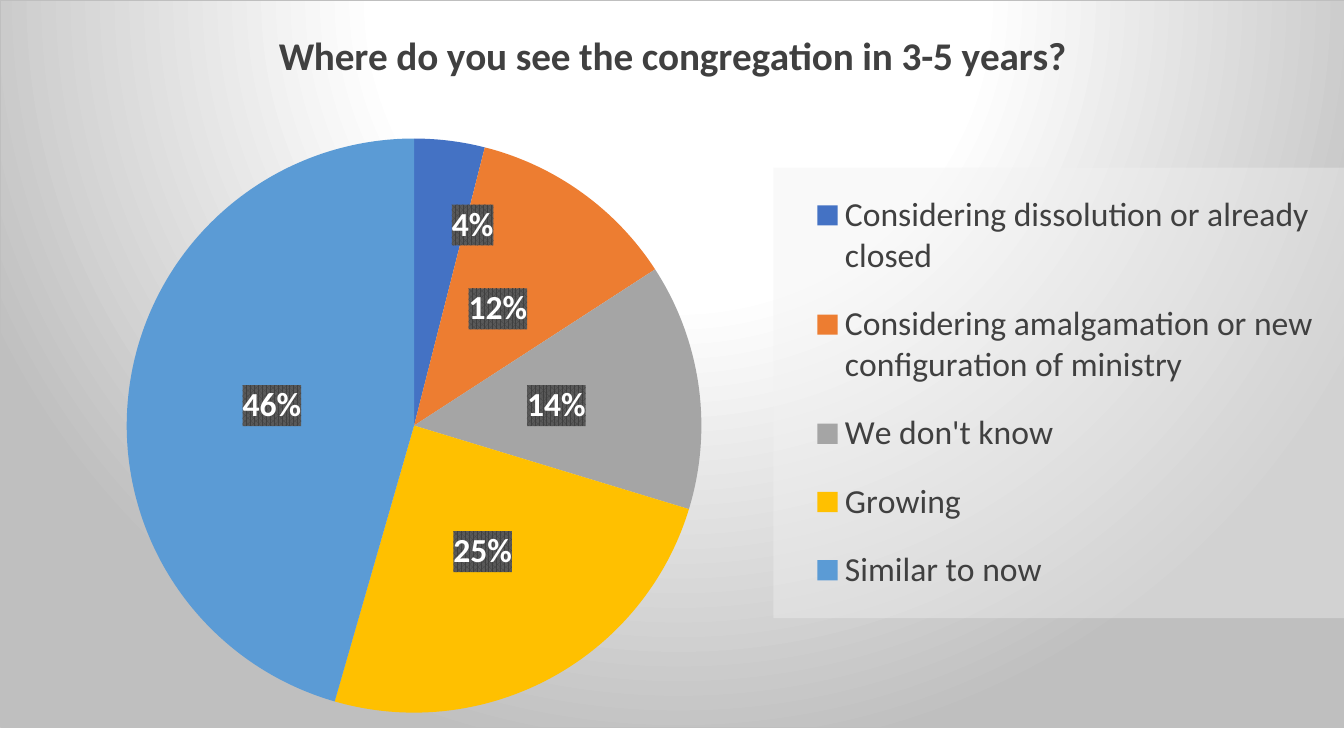
from dataclasses import dataclass

from lxml.etree import _Element as Element
from pptx import Presentation
from pptx.chart.data import CategoryChartData
from pptx.dml.color import RGBColor
from pptx.enum.chart import XL_CHART_TYPE as ChartType
from pptx.enum.chart import XL_LABEL_POSITION as LabelPosition
from pptx.enum.chart import XL_LEGEND_POSITION as LegendPosition
from pptx.oxml import parse_xml
from pptx.oxml.ns import nsdecls, qn
from pptx.text.text import Font
from pptx.util import Inches, Pt

COLORS = {
    "text": "404040", "label": "FFFFFF", "label_back": "595959",
    "panel": "F2F2F2", "edge": "BFBFBF", "light": "FFFFFF",
    "blue": "4472C4", "orange": "ED7D31", "gray": "A5A5A5",
    "gold": "FFC000", "sky": "5B9BD5",
}
QUESTION = "Where do you see the congregation in 3-5 years?"
NS = nsdecls("c", "a")


@dataclass(frozen=True)
class Outlook:
    answer: str
    share: int
    color: str


OUTLOOKS = [
    Outlook("Considering dissolution or already closed", 4, "blue"),
    Outlook("Considering amalgamation or new configuration of ministry", 12, "orange"),
    Outlook("We don't know", 14, "gray"),
    Outlook("Growing", 25, "gold"),
    Outlook("Similar to now", 46, "sky"),
]


def style_font(font: Font, size: int, color: str, bold: bool = False) -> None:
    font.name = "Calibri"
    font.size = Pt(size)
    font.bold = bold
    font.color.rgb = RGBColor.from_string(COLORS[color])


def solid(color: str, alpha: int = 100) -> str:
    return (f'<a:srgbClr val="{COLORS[color]}">'
            f'<a:alpha val="{alpha * 1000}"/></a:srgbClr>')


def shape_style(content: str) -> Element:
    return parse_xml(f"<c:spPr {NS}>{content}</c:spPr>")


def place(part: Element, index: int, **settings: str | float) -> None:
    for layout in part.findall(qn("c:layout")):
        part.remove(layout)
    values = "".join(f'<c:{key} val="{value}"/>' for key, value in settings.items())
    part.insert(index, parse_xml(
        f"<c:layout {NS}><c:manualLayout>{values}</c:manualLayout></c:layout>"))


prs = Presentation()
prs.slide_width, prs.slide_height = Inches(13.33), Inches(7.5)
slide = prs.slides.add_slide(prs.slide_layouts[6])

survey = CategoryChartData()
survey.categories = [outlook.answer for outlook in OUTLOOKS]
survey.add_series("Series 1", [outlook.share for outlook in OUTLOOKS])
chart = slide.shapes.add_chart(
    ChartType.PIE, 0, 0, Inches(13.46), Inches(7.22), survey).chart
style_font(chart.font, 24, "text")

chart.has_title = True
chart.chart_title.text_frame.text = QUESTION
style_font(chart.chart_title.text_frame.paragraphs[0].runs[0].font, 28, "text", True)

chart.has_legend = True
chart.legend.position = LegendPosition.RIGHT
chart.legend.include_in_layout = False
style_font(chart.legend.font, 24, "text")

pie = chart.plots[0]
pie.vary_by_categories = True
answers = pie.series[0]
for position, outlook in enumerate(OUTLOOKS):
    fill = answers.points[position].format.fill
    fill.solid()
    fill.fore_color.rgb = RGBColor.from_string(COLORS[outlook.color])

percents = answers.data_labels
percents.show_percentage = True
percents.show_value = False
percents.position = LabelPosition.CENTER
style_font(percents.font, 24, "label", True)

smallest = answers.points[0].data_label
style_font(smallest.font, 24, "label", True)
smallest.position = LabelPosition.CENTER

root = chart.element
label_style = (f'<a:pattFill prst="pct75"><a:fgClr>{solid("text")}</a:fgClr>'
               f'<a:bgClr>{solid("label_back")}</a:bgClr></a:pattFill>'
               "<a:ln><a:noFill/></a:ln>")
for text_style in root.findall(f".//{qn('c:dLbls')}//{qn('c:txPr')}"):
    labels = text_style.getparent()
    for old_style in labels.findall(qn("c:spPr")):
        labels.remove(old_style)
    text_style.addprevious(shape_style(label_style))
    labels.find(qn("c:showVal")).set("val", "0")
    labels.find(qn("c:showPercent")).set("val", "1")

place(root.find(f".//{qn('c:dLbl')}"), 1, x=0.03, y=-0.08)
place(root.find(f".//{qn('c:title')}"), 1, xMode="edge", yMode="edge", x=0.2, y=0.03)
place(root.find(f".//{qn('c:plotArea')}"), 0, layoutTarget="inner",
      xMode="edge", yMode="edge", x=0.09, y=0.19, w=0.43, h=0.79)
legend = root.find(f".//{qn('c:legend')}")
place(legend, 1, xMode="edge", yMode="edge", x=0.57, y=0.23, w=0.43, h=0.62)
legend.find(qn("c:txPr")).addprevious(shape_style(
    f'<a:solidFill>{solid("panel", 39)}</a:solidFill><a:ln><a:noFill/></a:ln>'))

stops = "".join(f'<a:gs pos="{percent * 1000}">{solid(color)}</a:gs>'
                for percent, color in [(0, "light"), (39, "light"), (100, "edge")])
root.find(qn("c:chart")).addnext(shape_style(
    f'<a:gradFill><a:gsLst>{stops}</a:gsLst><a:path path="circle">'
    '<a:fillToRect l="50000" t="-80000" r="50000" b="180000"/></a:path></a:gradFill>'
    f'<a:ln w="{Pt(0.75)}"><a:solidFill>{solid("edge")}</a:solidFill></a:ln>'))

prs.save("out.pptx")
